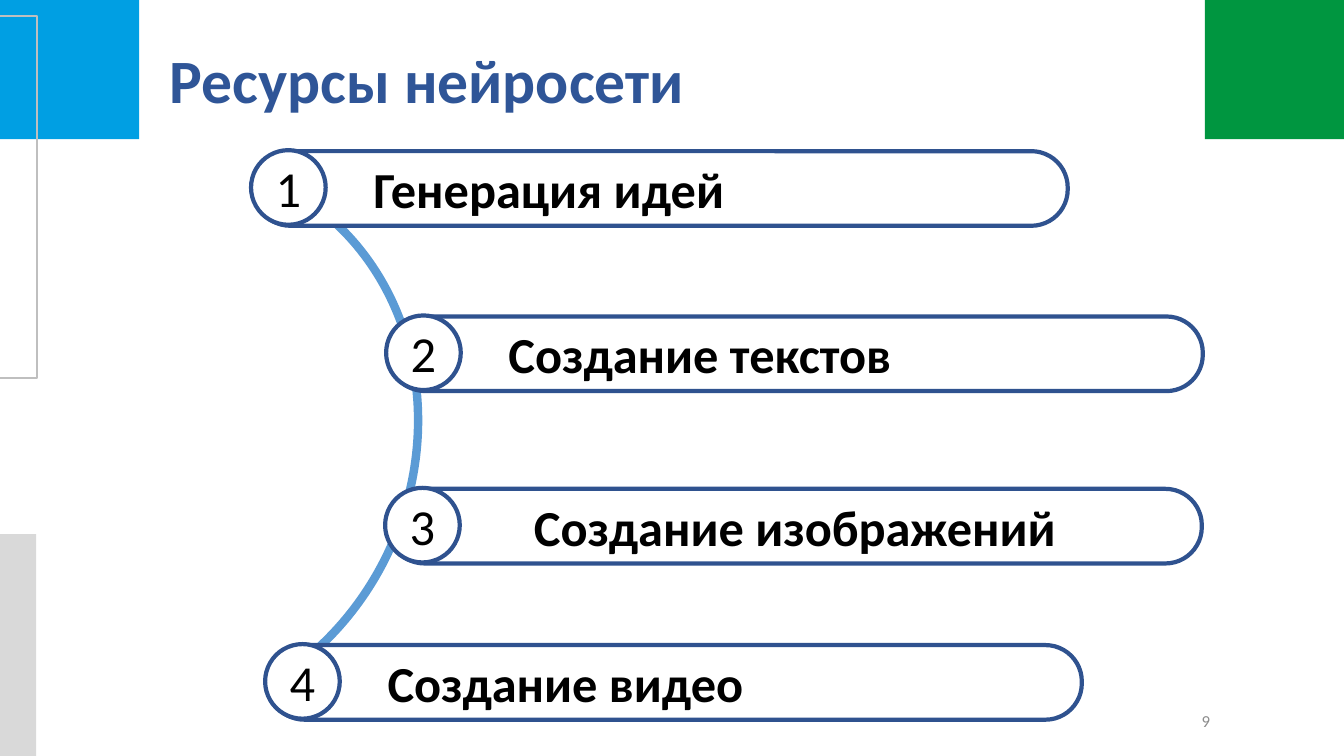
from pptx import Presentation
from pptx.dml.color import RGBColor
from pptx.enum.shapes import MSO_SHAPE
from pptx.enum.text import MSO_ANCHOR, PP_ALIGN
from pptx.util import Inches, Pt


def write(shape, text, size=36, color="000000", bold=False, align=PP_ALIGN.LEFT,
          indent=0, line_spacing=None):
    frame = shape.text_frame
    frame.word_wrap = True
    frame.vertical_anchor = MSO_ANCHOR.MIDDLE
    paragraph = frame.paragraphs[0]
    paragraph.alignment = align
    paragraph.line_spacing = line_spacing
    if indent:
        paragraph._p.get_or_add_pPr().set("indent", str(Inches(indent)))
    run = paragraph.add_run()
    run.text = text
    run.font.name = "Calibri"
    run.font.size = Pt(size)
    run.font.bold = bold
    run.font.color.rgb = RGBColor.from_string(color)


def style(shape, fill=None, line=None, width=0):
    """Set fill and outline, where None means no paint, and drop the shadow."""
    shape.shadow.inherit = False
    for paint, color in ((shape.fill, fill), (shape.line.fill, line)):
        if color:
            paint.solid()
            paint.fore_color.rgb = RGBColor.from_string(color)
        else:
            paint.background()
    if line:
        shape.line.width = Pt(width)


presentation = Presentation()
presentation.slide_width = Inches(13.33)
presentation.slide_height = Inches(7.5)
slide = presentation.slides.add_slide(presentation.slide_layouts[5])
shapes = slide.shapes

# Corner blocks and the frame on the left edge
for left, top, width, height, color in (
    (0, 0, 1.38, 1.38, "009FE3"),
    (11.95, 0, 1.38, 1.38, "009640"),
    (0, 5.3, 0.36, 2.2, "D9D9D9"),
):
    block = shapes.add_shape(MSO_SHAPE.RECTANGLE, Inches(left), Inches(top),
                             Inches(width), Inches(height))
    style(block, fill=color)

builder = shapes.build_freeform(Inches(-0.56), Inches(3.75))
builder.add_line_segments([(Inches(x), Inches(y)) for x, y in
                           ((-0.56, 0.16), (0.37, 0.16), (0.37, 3.75))], close=True)
style(builder.convert_to_shape(), line="BFBFBF", width=1.5)

# Title
title = shapes.title
title.left, title.top = Inches(1.58), Inches(0.4)
title.width, title.height = Inches(10.17), Inches(0.85)
write(title, "Ресурсы нейросети", size=44, color="2F5597", bold=True, line_spacing=0.9)

# Arc that joins the numbered bars
arc = shapes.add_shape(MSO_SHAPE.ARC, Inches(-1.05), Inches(1.54), Inches(5.15), Inches(5.67))
arc.adjustments[0] = 162
arc.adjustments[1] = 19.672
arc.rotation = 24.6
style(arc, line="5B9BD5", width=6)

# Numbered bars
BAR_WIDTH, BAR_HEIGHT = 8.07, 0.74
resources = (
    ("Генерация идей", 2.52, 1.5, PP_ALIGN.LEFT, 0.98),
    ("Создание текстов", 3.86, 3.14, PP_ALIGN.LEFT, 0.98),
    ("Создание изображений", 3.85, 4.85, PP_ALIGN.CENTER, 0),
    ("Создание видео", 2.66, 6.4, PP_ALIGN.LEFT, 0.98),
)
for number, (label, left, top, align, indent) in enumerate(resources, start=1):
    group = shapes.add_group_shape()
    bar = group.shapes.add_shape(MSO_SHAPE.ROUNDED_RECTANGLE, Inches(left), Inches(top),
                                 Inches(BAR_WIDTH), Inches(BAR_HEIGHT))
    bar.adjustments[0] = 0.487
    write(bar, label, bold=True, align=align, indent=indent)
    circle = group.shapes.add_shape(MSO_SHAPE.OVAL, Inches(left - 0.03), Inches(top - 0.01),
                                    Inches(BAR_HEIGHT), Inches(BAR_HEIGHT))
    write(circle, str(number), align=PP_ALIGN.CENTER)
    for shape in (bar, circle):
        style(shape, fill="FFFFFF", line="2F528F", width=3)

# Page number
page_number = shapes.add_textbox(Inches(9.42), Inches(6.95), Inches(2.68), Inches(0.4))
write(page_number, "9", size=12, color="8C8C8C", align=PP_ALIGN.RIGHT)

presentation.save("out.pptx")
